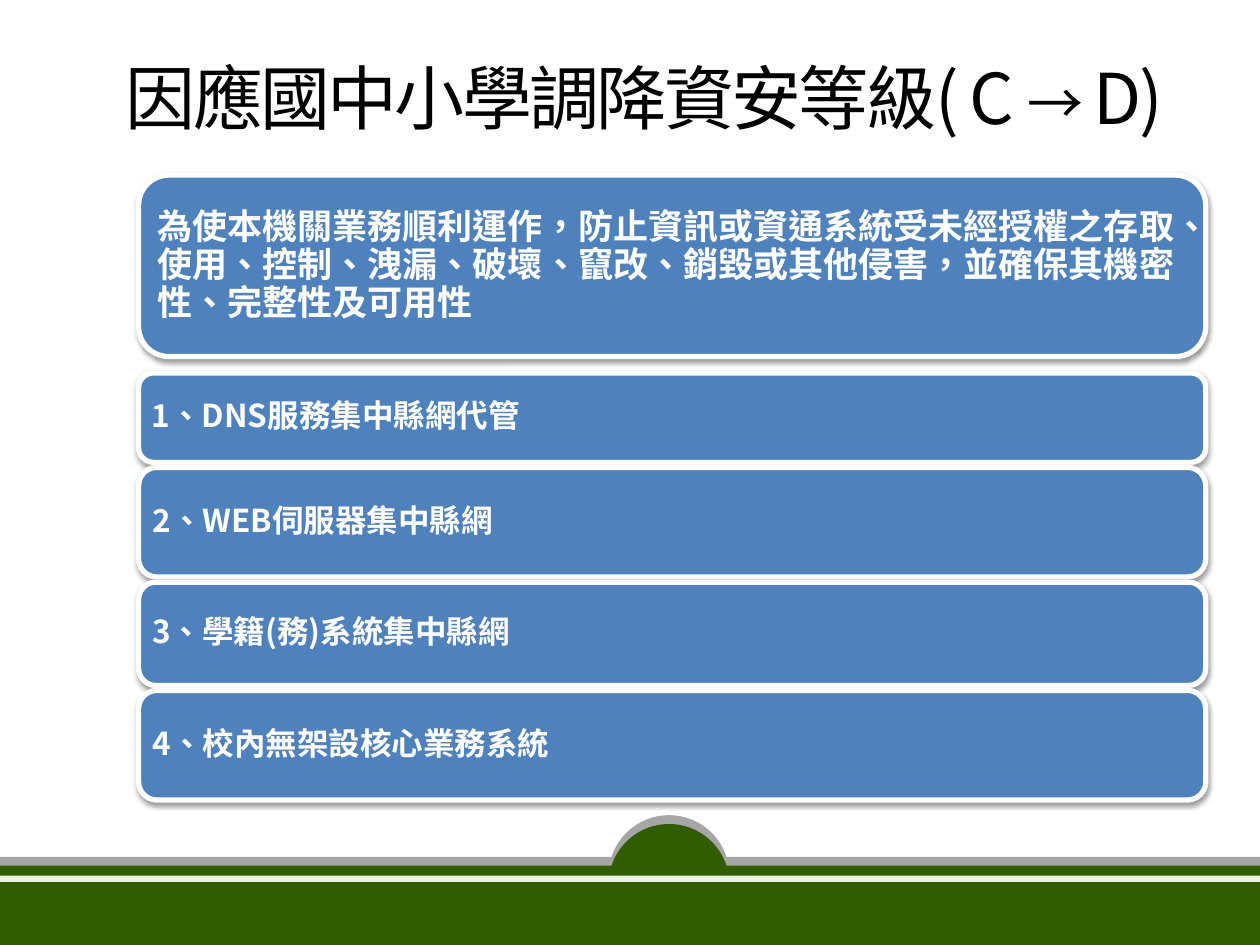
from lxml import etree
from pptx import Presentation
from pptx import util as u
from pptx.dml.color import RGBColor
from pptx.enum import shapes, text
from pptx.oxml import parse_xml
from pptx.oxml.ns import nsdecls, qn

FONT = "Noto Sans CJK SC"
WHITE, BLACK, BLUE = "FFFFFF", "000000", "4F81BD"
GREEN, GREY, CREAM = "305D00", "A6A6A6", "EBF1DE"


def color(hex_code):
    """Turn a hex string into a colour."""
    return RGBColor.from_string(hex_code)


def add_filled(slide, preset, box, fill):
    """Add a plain filled shape at a box given in inches."""
    shape = slide.shapes.add_shape(preset, *map(u.Inches, box))
    shape.shadow.inherit = False
    shape.fill.solid()
    shape.fill.fore_color.rgb = color(fill)
    shape.line.fill.background()
    return shape


def add_run(paragraph, wording, size, ink, bold=False, spacing=0):
    """Add one run of Chinese text."""
    run = paragraph.add_run()
    run.text = wording
    run.font.size = u.Pt(size)
    run.font.bold = bold
    run.font.color.rgb = color(ink)
    run.font.name = FONT
    properties = run._r.get_or_add_rPr()
    properties.set("lang", "zh-TW")
    if spacing:
        properties.set("spc", str(int(spacing * 100)))
    etree.SubElement(properties, qn("a:ea")).set("typeface", FONT)


def add_soft_shadow(shape):
    """Give a shape a soft shadow below it."""
    properties = shape._element.spPr
    properties.remove(properties.find(qn("a:effectLst")))
    properties.append(parse_xml(
        f'<a:effectLst {nsdecls("a")}>'
        f'<a:outerShdw blurRad="{u.Pt(3.1)}" dist="{u.Pt(1.6)}" dir="5400000" rotWithShape="0">'
        f'<a:srgbClr val="{BLACK}"><a:alpha val="38000"/></a:srgbClr>'
        '</a:outerShdw></a:effectLst>'))


def add_footer(slide, left, top, width, height):
    """Draw the grey and green bands with their central bump."""
    bump, lift = 0.96, 0.07
    bump_left = left + width / 2 - 0.17
    rect, oval = shapes.MSO_SHAPE.RECTANGLE, shapes.MSO_SHAPE.OVAL
    add_filled(slide, oval, (bump_left, top - 0.33, bump, bump), GREY)
    add_filled(slide, rect, (left, top, width, height - lift), GREY)
    add_filled(slide, rect, (left, top + lift, width, height - lift), GREEN)
    add_filled(slide, oval, (bump_left, top - 0.33 + lift, bump, bump), GREEN)
    add_filled(slide, rect, (left, top + 0.15, width, 0.05), CREAM)


def add_title(slide, left, top, width, height):
    """Place the slide title."""
    title = slide.shapes.add_textbox(*map(u.Inches, (left, top, width, height)))
    frame = title.text_frame
    frame.word_wrap = False
    frame.auto_size = text.MSO_AUTO_SIZE.SHAPE_TO_FIT_TEXT
    for wording, size in (("因應國中小學調降資安等級( C ", 40), ("→ ", 32), ("D)", 40)):
        add_run(frame.paragraphs[0], wording, size, BLACK, spacing=-1.5)


def add_panel(slide, box, wording, size, inset):
    """Draw one rounded panel with its statement."""
    panel = add_filled(slide, shapes.MSO_SHAPE.ROUNDED_RECTANGLE, box, BLUE)
    panel.line.color.rgb = color(WHITE)
    panel.line.width = u.Pt(3)
    add_soft_shadow(panel)
    frame = panel.text_frame
    frame.word_wrap = True
    frame.vertical_anchor = text.MSO_ANCHOR.MIDDLE
    frame.margin_left = frame.margin_right = u.Inches(inset)
    frame.margin_top = frame.margin_bottom = u.Inches(inset)
    statement = frame.paragraphs[0]
    statement.alignment = text.PP_ALIGN.LEFT
    statement.line_spacing = 0.9
    statement.space_after = u.Pt(size * 0.35)
    add_run(statement, wording, size, WHITE, bold=True)


def add_measures(slide, left, top, width):
    """Stack the purpose and the four measures below it."""
    purpose = ("為使本機關業務順利運作，防止資訊或資通系統受未經授權之存取、使用、控制、洩漏、"
               "破壞、竄改、銷毀或其他侵害，並確保其機密性、完整性及可用性")
    add_panel(slide, (left, top, width, 1.44), purpose, 20, 0.08)
    measures = (
        ("1、DNS服務集中縣網代管", 0.71),
        ("2、WEB伺服器集中縣網", 0.87),
        ("3、學籍(務)系統集中縣網", 0.82),
        ("4、校內無架設核心業務系統", 0.87),
    )
    row_top = top + 1.57
    for wording, height in measures:
        add_panel(slide, (left, row_top, width, height), wording, 18, 0.07)
        row_top += height + 0.04


def main():
    """Build and save the slide."""
    deck = Presentation()
    deck.slide_width, deck.slide_height = u.Inches(10), u.Inches(7.5)
    slide = deck.slides.add_slide(deck.slide_layouts[6])
    add_footer(slide, 0, 6.8, 10, 0.7)
    add_measures(slide, 1.1, 1.39, 8.47)
    add_title(slide, 0.9, 0.38, 8.86, 0.77)
    deck.save("out.pptx")


if __name__ == "__main__":
    main()
